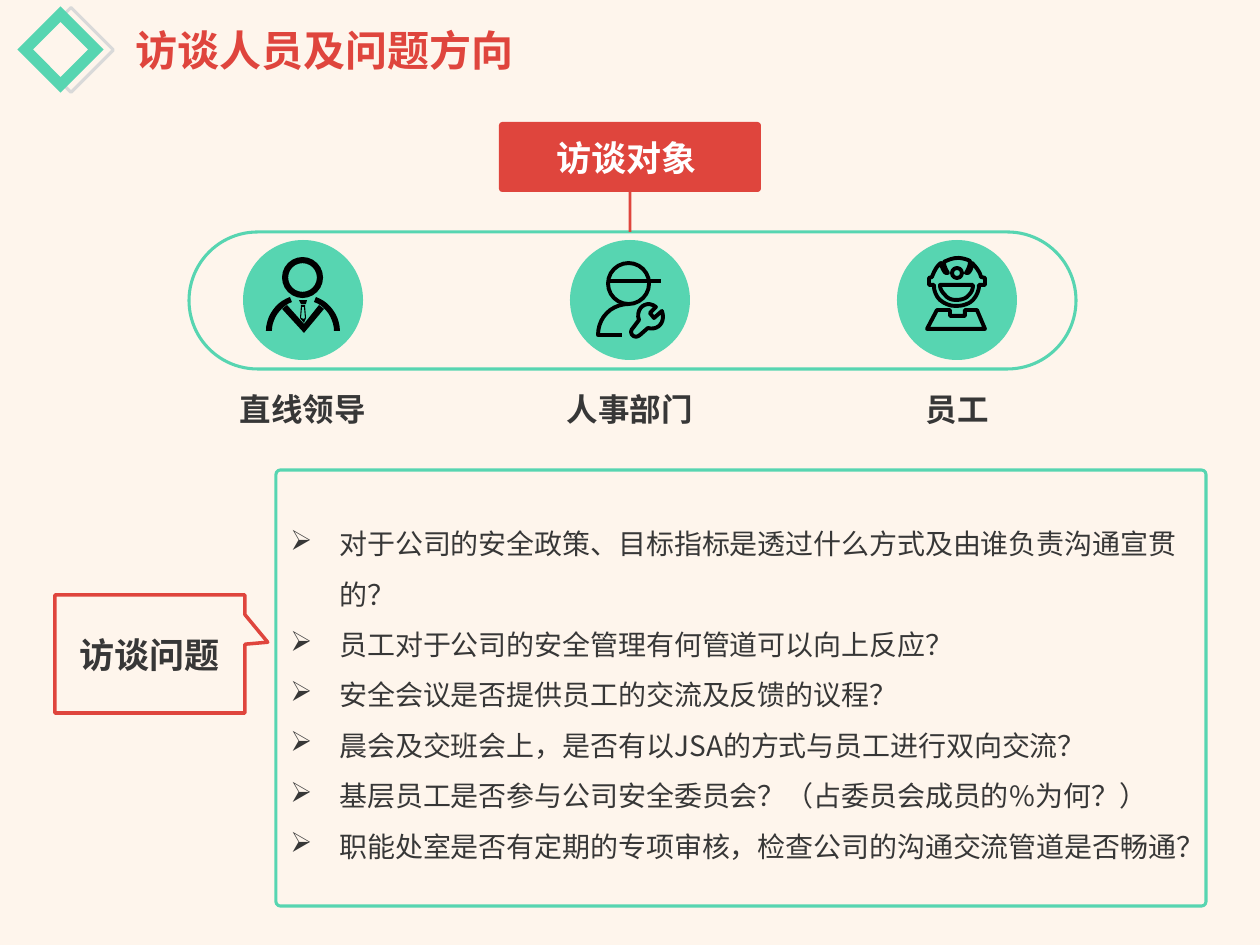
from dataclasses import dataclass
from typing import NamedTuple

from lxml import etree
from pptx import Presentation
from pptx.dml.color import RGBColor
from pptx.enum.shapes import MSO_CONNECTOR, MSO_SHAPE
from pptx.enum.text import MSO_ANCHOR, MSO_AUTO_SIZE, PP_ALIGN
from pptx.oxml.ns import qn
from pptx.util import Emu, Pt

PX = 914400 / 126
SUBPX = 10  # freeform units in one px, so that curves stay smooth
CURVE_STEPS = 10
LEFT, CENTER = PP_ALIGN.LEFT, PP_ALIGN.CENTER
MIDDLE = MSO_ANCHOR.MIDDLE
ROUND_RECT, OVAL, RECT = MSO_SHAPE.ROUNDED_RECTANGLE, MSO_SHAPE.OVAL, MSO_SHAPE.RECTANGLE
DONUT, FRAME, CALLOUT = MSO_SHAPE.DONUT, MSO_SHAPE.FRAME, MSO_SHAPE.RECTANGULAR_CALLOUT
STRAIGHT = MSO_CONNECTOR.STRAIGHT


@dataclass(frozen=True)
class Theme:
    paper: str = "FEF5EC"
    red: str = "DF453D"
    green: str = "57D5B1"
    grey: str = "D9D9D9"
    ink: str = "373737"
    white: str = "FFFFFF"
    black: str = "000000"
    font: str = "Noto Sans CJK SC"
    title: int = 24
    heading: int = 20
    label: int = 18
    body: int = 16


class Box(NamedTuple):
    x: int
    y: int
    w: int
    h: int


class Style(NamedTuple):
    fill: str | None = None
    line: str | None = None
    width: float = 1.75


# A two-number step is a straight line; six numbers are a cubic curve.
Contour = list[tuple[int, ...]]


@dataclass(frozen=True)
class Outline:
    contours: list[Contour]
    style: Style
    closed: bool = True


@dataclass(frozen=True)
class Ring:
    box: Box
    style: Style
    kind: int = OVAL
    adj: tuple[float, ...] = ()


@dataclass(frozen=True)
class Person:
    label: str
    label_width: int
    icon: list[Outline | Ring]


T = Theme()
SOLID = Style(fill=T.black)
STROKE = Style(line=T.black, width=2.25)

LEADER_ICON = [
    Ring(Box(282, 257, 41, 41), SOLID, DONUT, (0.15,)),
    Outline([[(304, 333), (324, 309), (319, 305), (304, 324), (287, 305), (282, 309)]], SOLID),
    Outline([[(340, 331), (340, 316, 330, 302, 316, 297), (314, 302),
              (326, 306, 334, 319, 334, 331)]], SOLID),
    Outline([[(272, 331), (272, 319, 280, 307, 292, 302), (290, 297),
              (276, 302, 266, 316, 266, 331)]], SOLID),
    Outline([[(304, 319), (305, 318), (304, 307), (302, 307), (301, 318)],
             [(300, 318), (301, 305), (305, 305), (306, 318), (304, 323)]], SOLID),
    Outline([[(306, 304), (307, 300), (299, 300), (301, 304)]], SOLID),
]
HR_ICON = [
    Outline([[(662, 311), (654, 318), (650, 313), (656, 307), (646, 299, 635, 309, 639, 320),
              (633, 328), (628, 333, 634, 340, 640, 335), (648, 328),
              (658, 331, 666, 322, 662, 311)]], STROKE),
    Ring(Box(608, 263, 41, 41), STROKE),
    Outline([[(608, 281), (661, 281)]], STROKE, closed=False),
    Outline([[(622, 335), (598, 335), (598, 318, 611, 304, 629, 304)]], STROKE, closed=False),
]
STAFF_ICON = [
    Outline([[(937, 310), (950, 310), (950, 316), (965, 316), (965, 310), (977, 310),
              (985, 329), (927, 329)]], STROKE),
    Outline([[(985, 285), (979, 285), (979, 291, 977, 295, 973, 300),
              (969, 304, 963, 306, 956, 306), (950, 306, 945, 304, 940, 300),
              (936, 296, 934, 291, 934, 285), (929, 285), (929, 278), (932, 277),
              (934, 272, 936, 267, 941, 263), (942, 268, 944, 272, 946, 273), (948, 273),
              (945, 268, 944, 265, 944, 262), (948, 260, 953, 258, 958, 258),
              (962, 258, 966, 259, 970, 261), (970, 265, 969, 268, 966, 273), (968, 273),
              (970, 272, 972, 268, 972, 263), (976, 267, 980, 272, 981, 277),
              (985, 278)]], STROKE),
    Ring(Box(952, 268, 10, 10), STROKE),
    Outline([[(973, 285), (940, 285), (940, 289, 942, 292, 945, 295),
              (948, 299, 952, 300, 956, 300), (961, 300, 966, 299, 969, 295),
              (972, 292, 973, 289, 973, 285)]], STROKE),
]
PEOPLE = [
    Person("直线领导", 152, LEADER_ICON),
    Person("人事部门", 152, HR_ICON),
    Person("员工", 89, STAFF_ICON),
]
QUESTIONS = [
    "对于公司的安全政策、目标指标是透过什么方式及由谁负责沟通宣贯的？",
    "员工对于公司的安全管理有何管道可以向上反应？",
    "安全会议是否提供员工的交流及反馈的议程？",
    "晨会及交班会上，是否有以JSA的方式与员工进行双向交流？",
    "基层员工是否参与公司安全委员会？（占委员会成员的%为何？）",
    "职能处室是否有定期的专项审核，检查公司的沟通交流管道是否畅通？",
]
FIRST_CENTER, CENTER_STEP, DISC = 303, 327, 120


def px(n: float) -> Emu:
    return Emu(round(n * PX))


def apply_style(sp, style: Style) -> None:
    sp.shadow.inherit = False
    if style.fill:
        sp.fill.solid()
        sp.fill.fore_color.rgb = RGBColor.from_string(style.fill)
    else:
        sp.fill.background()
    if style.line:
        sp.line.color.rgb = RGBColor.from_string(style.line)
        sp.line.width = Pt(style.width)
    else:
        sp.line.fill.background()


def add_preset(slide, kind: int, box: Box, style: Style, adj: tuple[float, ...] = (), rot: int = 0):
    sp = slide.shapes.add_shape(kind, *map(px, box))
    for i, value in enumerate(adj):
        sp.adjustments[i] = value
    sp.rotation = rot
    apply_style(sp, style)
    return sp


def flatten(contour: Contour) -> list[tuple[float, float]]:
    """Turn the curves of a contour into short lines, in freeform units."""
    points = [contour[0]]
    for step in contour[1:]:
        if len(step) == 2:
            points.append(step)
            continue
        controls = [points[-1], step[:2], step[2:4], step[4:]]
        for i in range(1, CURVE_STEPS + 1):
            t = i / CURVE_STEPS
            weights = ((1 - t) ** 3, 3 * t * (1 - t) ** 2, 3 * t * t * (1 - t), t ** 3)
            points.append(tuple(sum(w * c[k] for w, c in zip(weights, controls)) for k in (0, 1)))
    return [(x * SUBPX, y * SUBPX) for x, y in points]


def add_outline(slide, outline: Outline) -> None:
    first, *others = map(flatten, outline.contours)
    builder = slide.shapes.build_freeform(*first[0], scale=PX / SUBPX)
    builder.add_line_segments(first[1:], close=outline.closed)
    for points in others:
        builder.move_to(*points[0])
        builder.add_line_segments(points[1:], close=outline.closed)
    apply_style(builder.convert_to_shape(), outline.style)


def add_icon(slide, icon: list[Outline | Ring]) -> None:
    for part in icon:
        if isinstance(part, Ring):
            add_preset(slide, part.kind, part.box, part.style, part.adj)
        else:
            add_outline(slide, part)


def add_run(p, text: str, size: int, color: str, bold: bool = True) -> None:
    r = p.add_run()
    r.text = text
    r.font.size, r.font.bold = Pt(size), bold
    r.font.color.rgb = RGBColor.from_string(color)
    r.font.name = T.font
    etree.SubElement(r.font._element, qn("a:ea"), typeface=T.font)


def add_label(slide, box: Box, text: str, size: int, color: str, align=CENTER) -> None:
    tf = slide.shapes.add_textbox(*map(px, box)).text_frame
    tf.word_wrap, tf.auto_size = False, MSO_AUTO_SIZE.SHAPE_TO_FIT_TEXT
    tf.paragraphs[0].alignment = align
    add_run(tf.paragraphs[0], text, size, color)


def add_title(slide, box: Box, text: str) -> None:
    sp = slide.shapes.title
    sp.left, sp.top, sp.width, sp.height = map(px, box)
    tf = sp.text_frame
    tf.word_wrap, tf.auto_size, tf.vertical_anchor = False, MSO_AUTO_SIZE.NONE, MIDDLE
    tf.paragraphs[0].alignment = LEFT
    add_run(tf.paragraphs[0], text, T.title, T.red)


def add_questions(slide, box: Box) -> None:
    tf = slide.shapes.add_textbox(*map(px, box)).text_frame
    tf.word_wrap, tf.auto_size = True, MSO_AUTO_SIZE.SHAPE_TO_FIT_TEXT
    for i, question in enumerate(QUESTIONS):
        p = tf.add_paragraph() if i else tf.paragraphs[0]
        p.line_spacing = 1.5
        pPr = p._p.get_or_add_pPr()
        pPr.set("marL", str(px(49)))
        pPr.set("indent", str(px(-49)))
        etree.SubElement(pPr, qn("a:buChar"), char="➢")
        add_run(p, question, T.body, T.ink, bold=False)


def main() -> None:
    prs = Presentation()
    prs.slide_width, prs.slide_height = px(1260), px(945)
    slide = prs.slides.add_slide(prs.slide_layouts[5])
    slide.background.fill.solid()
    slide.background.fill.fore_color.rgb = RGBColor.from_string(T.paper)

    header = add_preset(slide, ROUND_RECT, Box(499, 122, 262, 70), Style(T.red), (0.05,))
    add_preset(slide, ROUND_RECT, Box(189, 232, 887, 137), Style(line=T.green), (0.5,))
    for i, person in enumerate(PEOPLE):
        center = FIRST_CENTER + i * CENTER_STEP
        add_preset(slide, OVAL, Box(center - DISC // 2, 240, DISC, DISC), Style(T.green))
        add_icon(slide, person.icon)
        label = Box(center - person.label_width // 2, 384, person.label_width, 51)
        add_label(slide, label, person.label, T.label, T.ink)
    add_label(slide, Box(544, 130, 167, 55), "访谈对象", T.heading, T.white, LEFT)

    stem = slide.shapes.add_connector(STRAIGHT, px(630), px(192), px(630), px(232))
    stem.begin_connect(header, 2)
    stem.line.color.rgb, stem.line.width = RGBColor.from_string(T.red), Pt(1.5)
    etree.SubElement(stem._element.spPr, qn("a:effectLst"))

    add_preset(slide, CALLOUT, Box(91, 559, 118, 190), Style(line=T.red, width=2), (0.1, 0.62), 270)
    add_label(slide, Box(67, 627, 166, 55), "访谈问题", T.heading, T.ink, LEFT)
    add_preset(slide, ROUND_RECT, Box(276, 470, 930, 436), Style(line=T.green), (0.01,))
    add_questions(slide, Box(278, 504, 926, 369))

    add_title(slide, Box(123, 18, 407, 63), "访谈人员及问题方向")
    add_preset(slide, RECT, Box(41, 20, 60, 60), Style(line=T.grey), rot=45)
    add_preset(slide, FRAME, Box(30, 19, 61, 61), Style(T.green), (0.18,), 45)
    prs.save("out.pptx")


if __name__ == "__main__":
    main()
